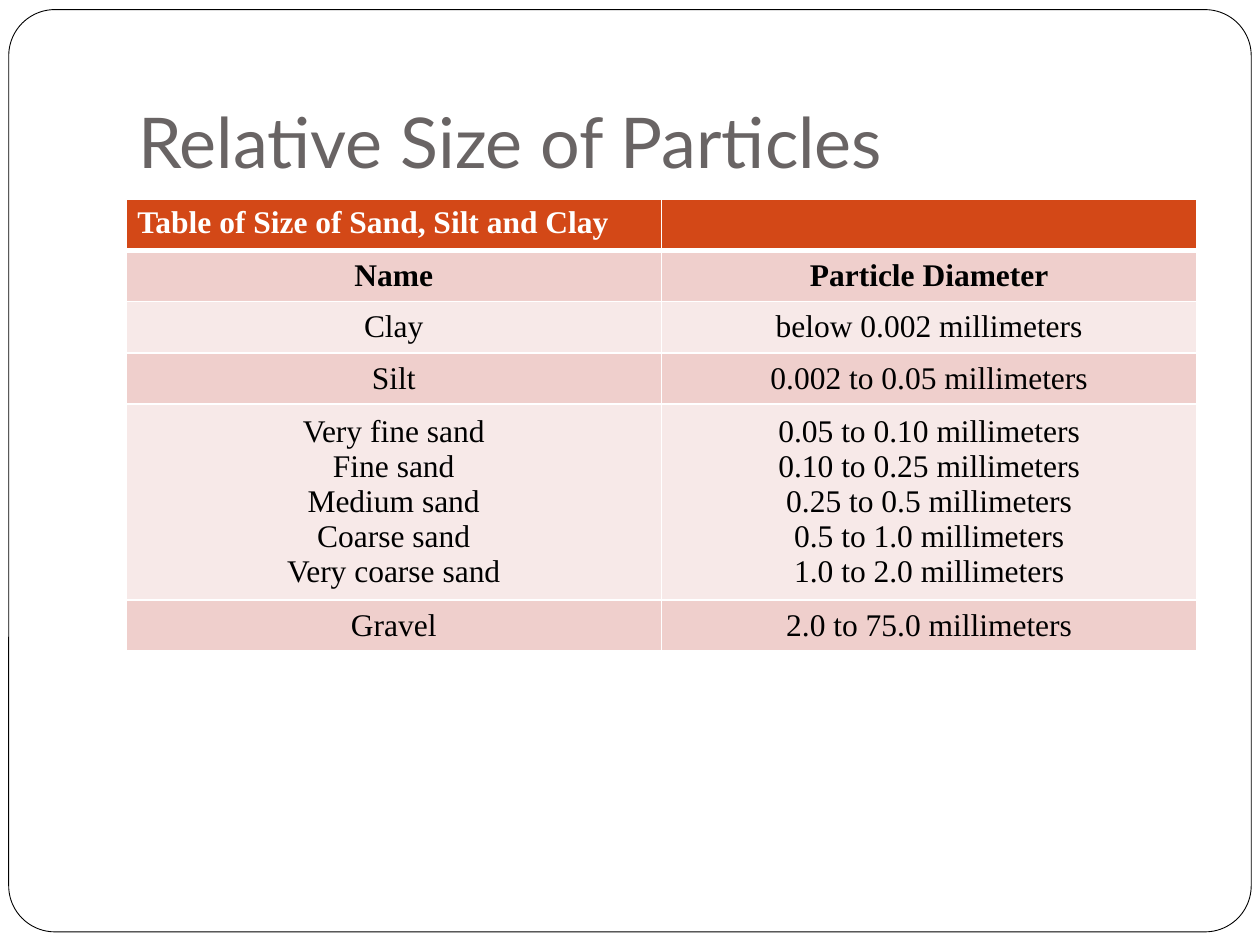
"""Build a slide with a table of soil particle sizes."""
from lxml.etree import SubElement
from pptx import Presentation
from pptx.dml.color import RGBColor
from pptx.enum.shapes import MSO_SHAPE as Shape
from pptx.enum.text import MSO_ANCHOR as Anchor, PP_ALIGN as Align
from pptx.oxml.ns import qn
from pptx.util import Pt

TITLE = "Relative Size of Particles"
HEADER = ("Table of Size of Sand, Silt and Clay", "")
COLUMN_NAMES = ("Name", "Particle Diameter")
SANDS = [
    ("Very fine sand", "0.05 to 0.10 millimeters"),
    ("Fine sand", "0.10 to 0.25 millimeters"),
    ("Medium sand", "0.25 to 0.5 millimeters"),
    ("Coarse sand", "0.5 to 1.0 millimeters"),
    ("Very coarse sand", "1.0 to 2.0 millimeters"),
]
ROWS = [
    HEADER,
    COLUMN_NAMES,
    ("Clay", "below 0.002 millimeters"),
    ("Silt", "0.002 to 0.05 millimeters"),
    tuple("\v".join(column) for column in zip(*SANDS)),
    ("Gravel", "2.0 to 75.0 millimeters"),
]
COLORS = {
    "paper": "FFFFFF",
    "ink": "000000",
    "title": "696464",
    "header": "D34817",
    "dark band": "EFCFCC",
    "light band": "F7E9E8",
}
ROW_HEIGHT, SANDS_HEIGHT = 29.2, 104
TABLE_LEFT, TABLE_TOP, TABLE_WIDTH = 72, 114, 612


def color(name):
    return RGBColor.from_string(COLORS[name])


def set_margins(holder, left, top, right, bottom):
    holder.margin_left, holder.margin_top = Pt(left), Pt(top)
    holder.margin_right, holder.margin_bottom = Pt(right), Pt(bottom)


def style_text(paragraph, family, size, color_name, bold=False):
    font = paragraph.font
    font.name, font.size, font.bold = family, Pt(size), bold
    font.color.rgb = color(color_name)


def add_borders(cell, top, bottom):
    properties = cell._tc.get_or_add_tcPr()
    for side, width in (("L", 1), ("R", 1), ("T", top), ("B", bottom)):
        border = SubElement(properties, qn(f"a:ln{side}"), w=str(Pt(width)))
        fill = SubElement(border, qn("a:solidFill"))
        SubElement(fill, qn("a:srgbClr"), val=COLORS["paper"])


def add_frame(slide):
    frame = slide.shapes.add_shape(
        Shape.ROUNDED_RECTANGLE, Pt(5), Pt(5.5), Pt(710), Pt(527))
    frame.adjustments[0] = 0.05
    frame.shadow.inherit = False
    frame.fill.solid()
    frame.fill.fore_color.rgb = color("paper")
    frame.line.color.rgb = color("ink")
    frame.line.width = Pt(0.5)


def add_title(slide):
    title = slide.shapes.add_textbox(Pt(72), Pt(21.6), Pt(612), Pt(90)).text_frame
    title.word_wrap = True
    title.vertical_anchor = Anchor.BOTTOM
    set_margins(title, 7.2, 3.6, 7.2, 7.2)
    title.text = TITLE
    style_text(title.paragraphs[0], "Lato", 40, "title")


def add_size_table(slide):
    heights = [SANDS_HEIGHT if "\v" in row[0] else ROW_HEIGHT for row in ROWS]
    table = slide.shapes.add_table(
        len(ROWS), len(HEADER), Pt(TABLE_LEFT), Pt(TABLE_TOP),
        Pt(TABLE_WIDTH), Pt(sum(heights))).table
    for column in table.columns:
        column.width = Pt(TABLE_WIDTH / len(HEADER))
    for r, (row, height) in enumerate(zip(ROWS, heights)):
        table.rows[r].height = Pt(height)
        is_header = row is HEADER
        band = "header" if is_header else "dark band" if r % 2 else "light band"
        for c, words in enumerate(row):
            cell = table.cell(r, c)
            add_borders(cell, 3 if r == 1 else 1, 3 if is_header else 1)
            cell.fill.solid()
            cell.fill.fore_color.rgb = color(band)
            cell.text_frame.text = words
            paragraph = cell.text_frame.paragraphs[0]
            style_text(paragraph, "Times New Roman", 18,
                       "paper" if is_header else "ink", r < 2)
            if is_header:
                set_margins(cell, 6.5, 3.6, 6.5, 3.6)
            else:
                set_margins(cell, 2, 2, 2, 2)
                cell.vertical_anchor = Anchor.MIDDLE
                paragraph.alignment = Align.CENTER


def main():
    deck = Presentation()
    deck.slide_width, deck.slide_height = Pt(720), Pt(540)
    slide = deck.slides.add_slide(deck.slide_layouts[6])
    add_frame(slide)
    add_title(slide)
    add_size_table(slide)
    deck.save("out.pptx")


if __name__ == "__main__":
    main()
